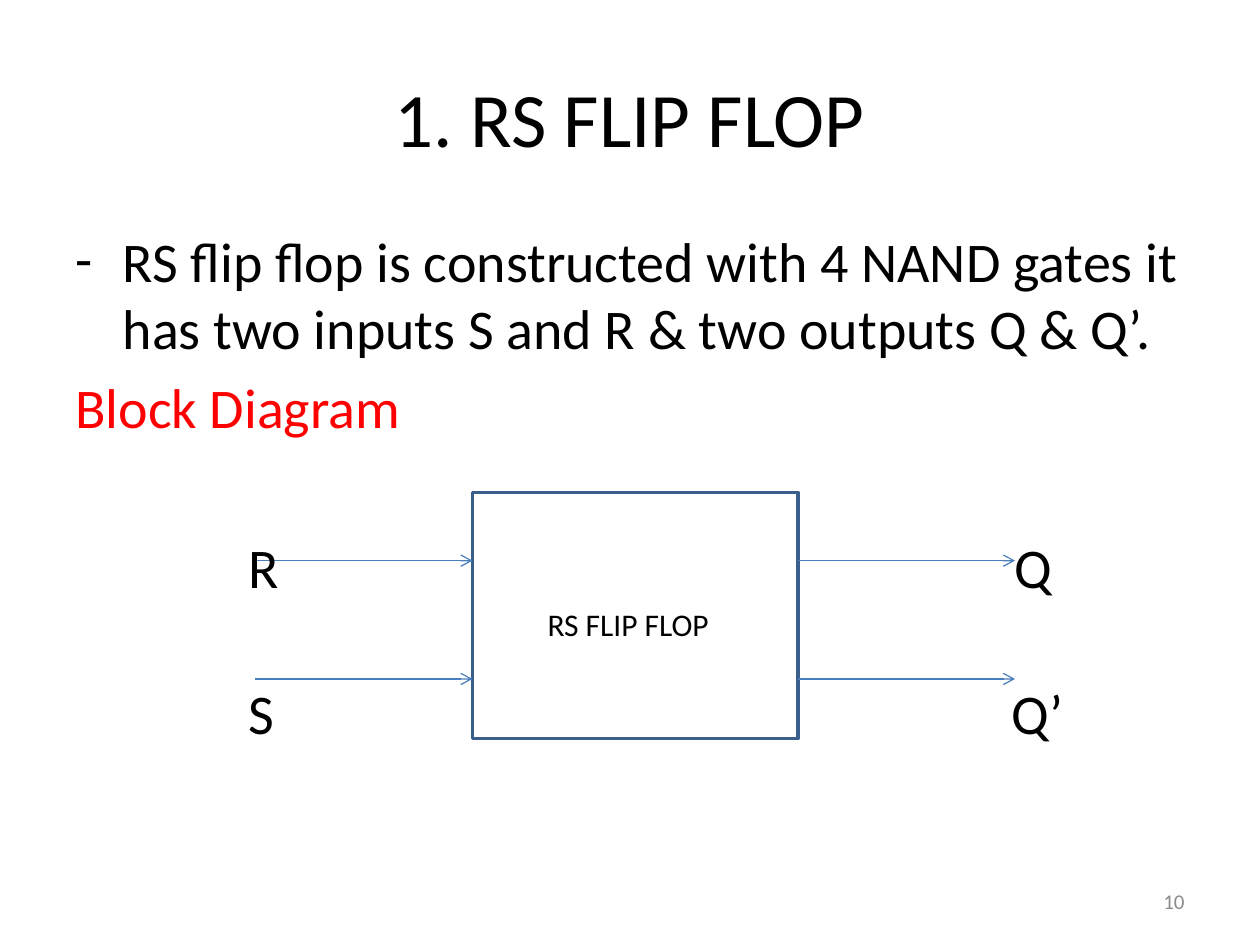
from dataclasses import dataclass

from lxml import etree
from pptx import Presentation
from pptx.dml.color import RGBColor
from pptx.enum.shapes import MSO_CONNECTOR, MSO_SHAPE
from pptx.enum.text import MSO_ANCHOR, PP_ALIGN
from pptx.oxml.ns import qn
from pptx.util import Pt

LEFT, MID, RIGHT = PP_ALIGN.LEFT, PP_ALIGN.CENTER, PP_ALIGN.RIGHT
TOP, CENTER = MSO_ANCHOR.TOP, MSO_ANCHOR.MIDDLE
RECT, LINE = MSO_SHAPE.RECTANGLE, MSO_CONNECTOR.STRAIGHT


@dataclass(frozen=True)
class Theme:
    font: str = "Calibri"
    ink: str = "000000"
    red: str = "FF0000"
    gray: str = "8C8C8C"
    white: str = "FFFFFF"
    edge: str = "3A5F8C"
    wire: str = "4B7EBC"
    head: int = 44
    body: int = 32
    block: int = 18
    note: int = 12


THEME = Theme()


def rgb(color):
    return RGBColor.from_string(color)


def write(par, text, size, color=THEME.ink, align=LEFT):
    par.alignment = align
    run = par.add_run()
    run.text = text
    font = run.font
    font.name, font.size = THEME.font, Pt(size)
    font.color.rgb = rgb(color)


def set_frame(frame, anchor=TOP, pad=(7.2, 3.6, 7.2, 3.6)):
    frame.word_wrap = True
    frame.vertical_anchor = anchor
    (frame.margin_left, frame.margin_top,
     frame.margin_right, frame.margin_bottom) = map(Pt, pad)


def add_title(slide, text):
    title = slide.shapes.title
    title.left, title.top, title.width, title.height = map(Pt, (36, 21.6, 648, 90))
    set_frame(title.text_frame, CENTER)
    write(title.text_frame.paragraphs[0], text, THEME.head, align=MID)


def add_box(slide, x, y, w, h, **look):
    frame = slide.shapes.add_textbox(Pt(x), Pt(y), Pt(w), Pt(h)).text_frame
    set_frame(frame, **look)
    return frame


def add_dash(par, hang):
    props = par._p.get_or_add_pPr()
    props.set("marL", str(Pt(hang)))
    props.set("indent", str(-Pt(hang)))
    etree.SubElement(props, qn("a:buFont"), typeface=THEME.font)
    etree.SubElement(props, qn("a:buChar"), char="-")


def add_block(slide, x, y, w, h, text):
    block = slide.shapes.add_shape(RECT, Pt(x), Pt(y), Pt(w), Pt(h))
    block.shadow.inherit = False
    block.fill.solid()
    block.fill.fore_color.rgb = rgb(THEME.white)
    block.line.color.rgb = rgb(THEME.edge)
    block.line.width = Pt(2)
    # The name sits slightly left of and below the centre
    set_frame(block.text_frame, CENTER, (0, 10, 8, 0))
    write(block.text_frame.paragraphs[0], text, THEME.block, align=MID)


def add_arrow(slide, x, y, length):
    arrow = slide.shapes.add_connector(LINE, Pt(x), Pt(y), Pt(x + length), Pt(y))
    arrow.line.color.rgb = rgb(THEME.wire)
    arrow.line.width = Pt(0.75)
    etree.SubElement(arrow.line._get_or_add_ln(), qn("a:tailEnd"), type="arrow")
    etree.SubElement(arrow._element.spPr, qn("a:effectLst"))


def add_label(slide, x, y, text):
    frame = add_box(slide, x, y, 50, 39, pad=(0, 0, 0, 0))
    write(frame.paragraphs[0], text, THEME.body)


def main():
    deck = Presentation()
    deck.slide_width, deck.slide_height = Pt(720), Pt(540)
    slide = deck.slides.add_slide(deck.slide_layouts[5])

    # Title and description
    add_title(slide, "1. RS FLIP FLOP")
    body = add_box(slide, 36, 126, 648, 136)
    first = body.paragraphs[0]
    add_dash(first, 27)
    write(first, "RS flip flop is constructed with 4 NAND gates it has two "
          "inputs S and R & two outputs Q & Q’.", THEME.body)
    second = body.add_paragraph()
    second.space_before = Pt(6.4)
    write(second, "Block Diagram", THEME.body, THEME.red)

    # Block with its inputs and outputs
    left, wide, reach = 270, 186, 124
    add_block(slide, left, 281.5, wide, 140.5, "RS FLIP FLOP")
    for y in (320.4, 388):
        for x in (left - reach, left + wide):
            add_arrow(slide, x, y, reach)
    for x, y, text in ((142, 304.5, "R"), (580, 304.5, "Q"),
                       (142, 388, "S"), (578, 388, "Q’")):
        add_label(slide, x, y, text)

    # Page number
    page = add_box(slide, 516, 500.4, 168, 28.8, anchor=CENTER)
    write(page.paragraphs[0], "10", THEME.note, THEME.gray, RIGHT)

    deck.save("out.pptx")


if __name__ == "__main__":
    main()
